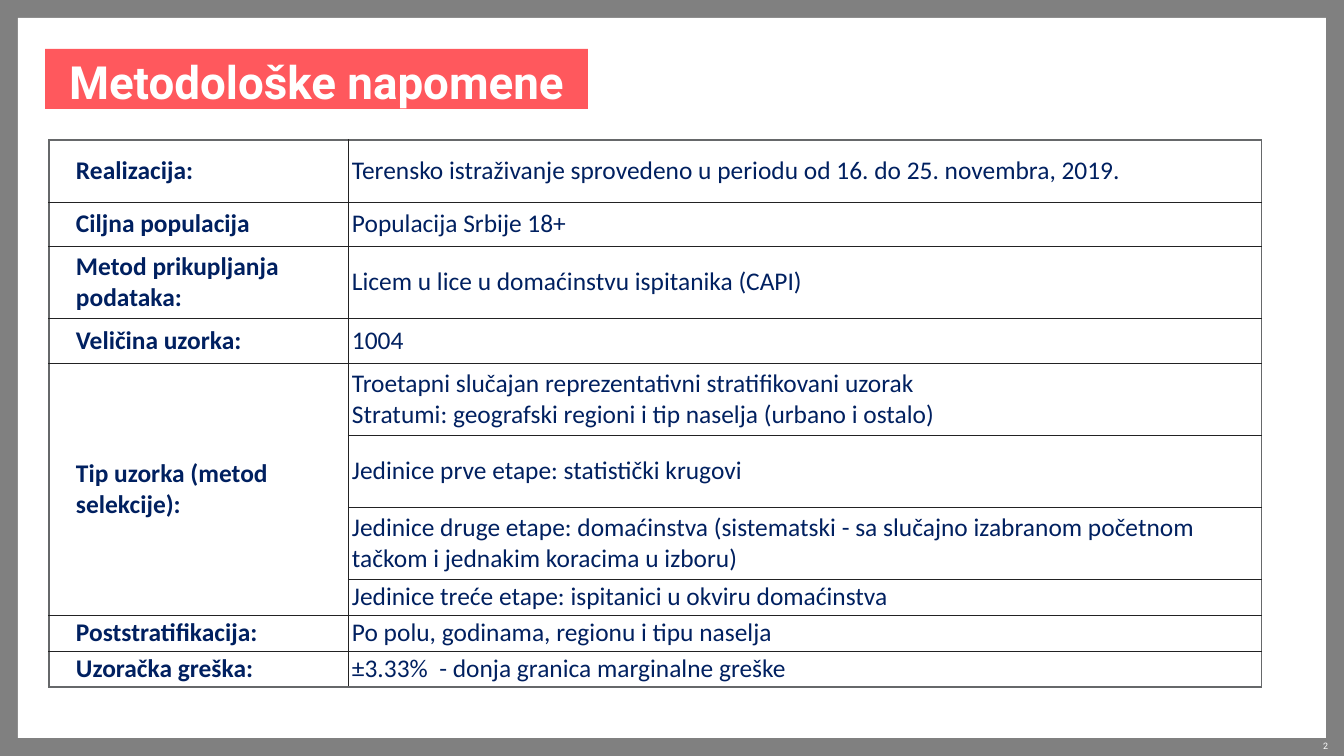
from lxml.etree import SubElement
from pptx import Presentation
from pptx.dml.color import RGBColor
from pptx.enum.shapes import MSO_SHAPE as Shape
from pptx.enum.text import MSO_ANCHOR as Anchor, PP_ALIGN as Align
from pptx.oxml.ns import qn
from pptx.util import Pt

PX = 10000  # EMU in one px
WIDTH, HEIGHT = 1344, 756
GREY, WHITE, CORAL, NAVY = "808080", "FFFFFF", "FF585D", "002060"
INNER_LINE, OUTER_LINE = ("222223", 0.25), ("66686A", 1)

TITLE = "Metodološke napomene"
PAGE_NUMBER = "2"
COLUMNS = [299, 914]
# label, then (row height, lines of text) for each row the label spans
SECTIONS = [
    ("Realizacija:", [
        (62, ["Terensko istraživanje sprovedeno u periodu od 16. do 25. novembra, 2019."])]),
    ("Ciljna populacija", [(44, ["Populacija Srbije 18+"])]),
    ("Metod prikupljanja podataka:", [
        (72, ["Licem u lice u domaćinstvu ispitanika (CAPI)"])]),
    ("Veličina uzorka:", [(45, ["1004"])]),
    ("Tip uzorka (metod selekcije):", [
        (72, ["Troetapni slučajan reprezentativni stratifikovani uzorak",
              "Stratumi: geografski regioni i tip naselja (urbano i ostalo)"]),
        (72, ["Jedinice prve etape: statistički krugovi"]),
        (72, ["Jedinice druge etape: domaćinstva (sistematski - sa slučajno izabranom "
              "početnom tačkom i jednakim koracima u izboru)"]),
        (36, ["Jedinice treće etape: ispitanici u okviru domaćinstva"])]),
    ("Poststratifikacija:", [(36, ["Po polu, godinama, regionu i tipu naselja"])]),
    ("Uzoračka greška:", [(36, ["±3.33%  - donja granica marginalne greške"])]),
]


def color(value):
    return RGBColor.from_string(value)


def box(*px):
    return [value * PX for value in px]


def set_margins(target, left, top, right, bottom):
    target.margin_left, target.margin_top = left * PX, top * PX
    target.margin_right, target.margin_bottom = right * PX, bottom * PX


def add_run(paragraph, text, size, font, fill, bold=False):
    run = paragraph.add_run()
    run.text = text
    run.font.size, run.font.name, run.font.bold = Pt(size), font, bold
    run.font.color.rgb = color(fill)


def add_panel(slide, place, fill):
    shape = slide.shapes.add_shape(Shape.RECTANGLE, *box(*place))
    shape.shadow.inherit = False
    shape.fill.solid()
    shape.fill.fore_color.rgb = color(fill)
    shape.line.fill.background()
    return shape


def add_title(slide):
    frame = add_panel(slide, (45, 49, 543, 60), CORAL).text_frame
    frame.word_wrap = False
    frame.vertical_anchor = Anchor.MIDDLE
    set_margins(frame, 8, 7, 8, 0)
    paragraph = frame.paragraphs[0]
    paragraph.alignment = Align.CENTER
    paragraph.line_spacing = Pt(41)
    add_run(paragraph, TITLE, 36, "Roboto", WHITE, True)


def add_page_number(slide):
    frame = slide.shapes.add_textbox(*box(1255, 740, 73, 12)).text_frame
    frame.word_wrap = True
    set_margins(frame, 0, 0, 0, 0)
    paragraph = frame.paragraphs[0]
    paragraph.alignment = Align.RIGHT
    paragraph.line_spacing = 1.1
    add_run(paragraph, PAGE_NUMBER, 7, "Roboto", WHITE)


def set_borders(cell, outer):
    """Draw the four cell lines; outer names the sides on the table's edge."""
    properties = cell._tc.get_or_add_tcPr()
    for index, side in enumerate("LRTB"):
        fill, width = OUTER_LINE if side in outer else INNER_LINE
        line = SubElement(properties, qn("a:ln" + side), w=str(int(Pt(width))))
        SubElement(SubElement(line, qn("a:solidFill")), qn("a:srgbClr"), val=fill)
        properties.insert(index, line)


def fill_cell(cell, lines, bold=False, indent=0):
    cell.vertical_anchor = Anchor.MIDDLE
    set_margins(cell, 4, 0, 4, 0)
    frame = cell.text_frame
    for index, text in enumerate(lines):
        paragraph = frame.add_paragraph() if index else frame.paragraphs[0]
        if indent:
            paragraph._p.get_or_add_pPr().set("marL", str(indent * PX))
        add_run(paragraph, text, 20, "Calibri", NAVY, bold)


def add_notes_table(slide):
    heights = [height for _, rows in SECTIONS for height, _ in rows]
    last = len(heights) - 1
    place = box(49, 140, sum(COLUMNS), sum(heights))
    table = slide.shapes.add_table(len(heights), len(COLUMNS), *place).table
    table.first_row = table.horz_banding = False
    for column, width in zip(table.columns, COLUMNS):
        column.width = width * PX
    for index, height in enumerate(heights):
        table.rows[index].height = height * PX
        edge = ("T" if index == 0 else "") + ("B" if index == last else "")
        for column, side in enumerate("LR"):
            cell = table.cell(index, column)
            cell.fill.background()
            set_borders(cell, edge + side)

    start = 0
    for label, rows in SECTIONS:
        label_cell = table.cell(start, 0)
        if len(rows) > 1:
            label_cell.merge(table.cell(start + len(rows) - 1, 0))
        fill_cell(label_cell, [label], bold=True, indent=23)
        for offset, (_, lines) in enumerate(rows):
            fill_cell(table.cell(start + offset, 1), lines)
        start += len(rows)


def main():
    presentation = Presentation()
    presentation.slide_width, presentation.slide_height = box(WIDTH, HEIGHT)
    slide = presentation.slides.add_slide(presentation.slide_layouts[6])
    slide.background.fill.solid()
    slide.background.fill.fore_color.rgb = color(GREY)
    add_panel(slide, (18, 18, 1308, 720), WHITE)
    add_page_number(slide)
    add_title(slide)
    add_notes_table(slide)
    presentation.save("out.pptx")


if __name__ == "__main__":
    main()
